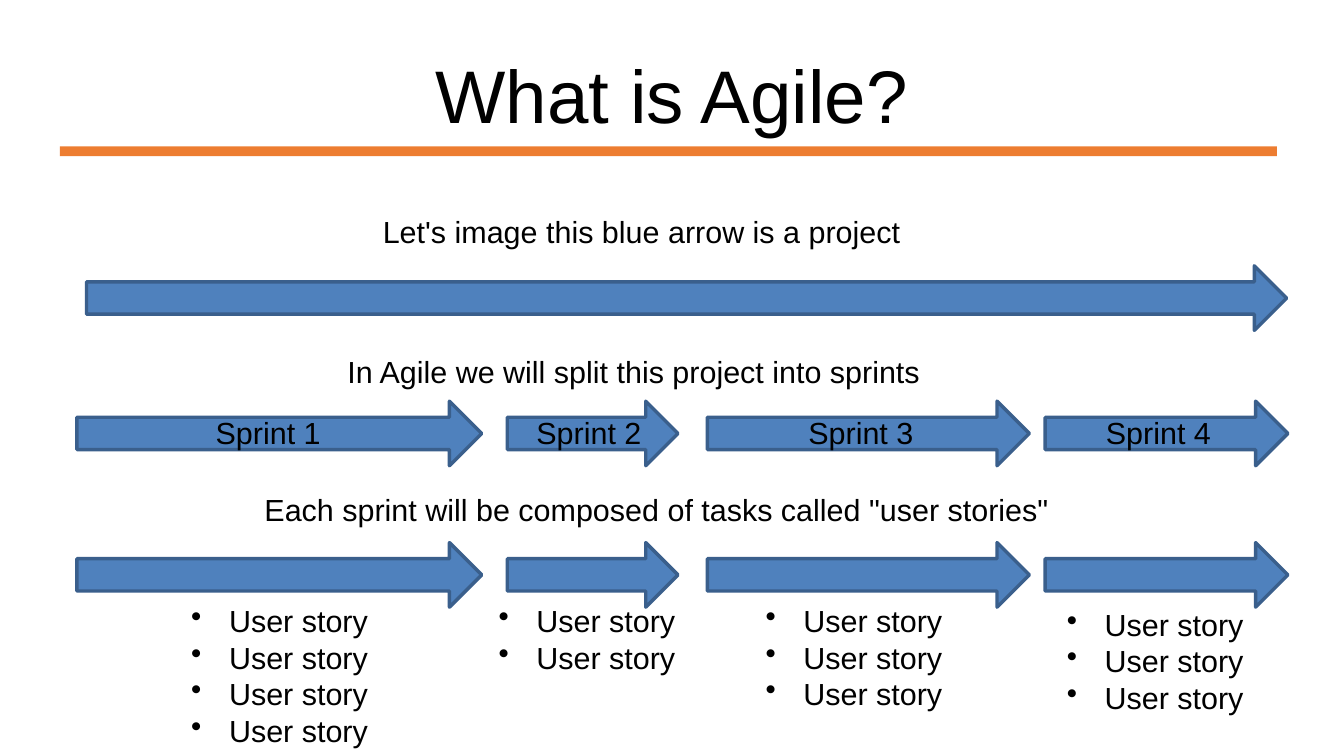
"""Builds the "What is Agile?" slide: a project split into sprints and user stories."""
import pptx
import pptx.util
import pptx.dml.color
import pptx.enum.shapes
import pptx.enum.text
import lxml.etree
from pptx.util import Inches

COLORS = {"text": "000000", "rule": "ED7D31", "arrow": "4F81BD", "outline": "3A5F8C"}
SHAPES = pptx.enum.shapes.MSO_SHAPE


def add_block(kind, left, top, width, height, fill, outline=None):
    block = slide.shapes.add_shape(kind, Inches(left), Inches(top), Inches(width), Inches(height))
    block.shadow.inherit = False
    block.fill.solid()
    block.fill.fore_color.rgb = pptx.dml.color.RGBColor.from_string(COLORS[fill])
    if outline:
        block.line.color.rgb = pptx.dml.color.RGBColor.from_string(COLORS[outline])
        block.line.width = pptx.util.Pt(2)
    else:
        block.line.fill.background()


def add_text(text, left, top, width, height, size=18):
    frame = slide.shapes.add_textbox(
        Inches(left), Inches(top), Inches(width), Inches(height)).text_frame
    frame.word_wrap = True
    frame.text = text
    for paragraph in frame.paragraphs:
        font = paragraph.runs[0].font
        font.name = "Arial"
        font.size = pptx.util.Pt(size)
        font.color.rgb = pptx.dml.color.RGBColor.from_string(COLORS["text"])
    return frame


deck = pptx.Presentation()
deck.slide_width = Inches(11.02)
deck.slide_height = Inches(6.2)
slide = deck.slides.add_slide(deck.slide_layouts[6])

title = add_text("What is Agile?", 0.55, 0.25, 9.92, 1.03, size=44)
title.margin_left = title.margin_right = title.margin_top = title.margin_bottom = 0
title.vertical_anchor = pptx.enum.text.MSO_ANCHOR.MIDDLE
title.paragraphs[0].alignment = pptx.enum.text.PP_ALIGN.CENTER
add_block(SHAPES.RECTANGLE, 0.49, 1.2, 9.98, 0.08, "rule")

captions = [
    ("Let's image this blue arrow is a project", 3.04, 1.7),
    ("In Agile we will split this project into sprints", 2.75, 2.85),
    ('Each sprint will be composed of tasks called "user stories"', 2.07, 3.98),
]
for caption, left, top in captions:
    add_text(caption, left, top, 6.98, 0.4)

add_block(SHAPES.RIGHT_ARROW, 0.71, 2.18, 9.84, 0.53, "arrow", "outline")

# Each sprint: arrow left and width, label left, stories left and top, story count
sprints = [
    (0.63, 3.32, 1.67, 1.47, 4.89, 4),
    (4.16, 1.4, 4.3, 3.99, 4.89, 2),
    (5.8, 2.64, 6.53, 6.18, 4.89, 3),
    (8.57, 1.99, 8.97, 8.65, 4.92, 3),
]
for number, (left, width, label_left, stories_left, stories_top, count) in enumerate(sprints, 1):
    for arrow_top in (3.29, 4.45):
        add_block(SHAPES.RIGHT_ARROW, left, arrow_top, width, 0.53, "arrow", "outline")
    add_text(f"Sprint {number}", label_left, 3.35, 1.2, 0.4)
    stories = add_text("\n".join(["User story"] * count),
                       stories_left, stories_top, 1.8, 0.1 + 0.3 * count)
    for story in stories.paragraphs:
        properties = story._p.get_or_add_pPr()
        properties.set("marL", str(Inches(0.31)))
        properties.set("indent", str(Inches(-0.31)))
        bullet = lxml.etree.SubElement(properties, pptx.oxml.ns.qn("a:buChar"))
        bullet.set("char", "•")

deck.save("out.pptx")
